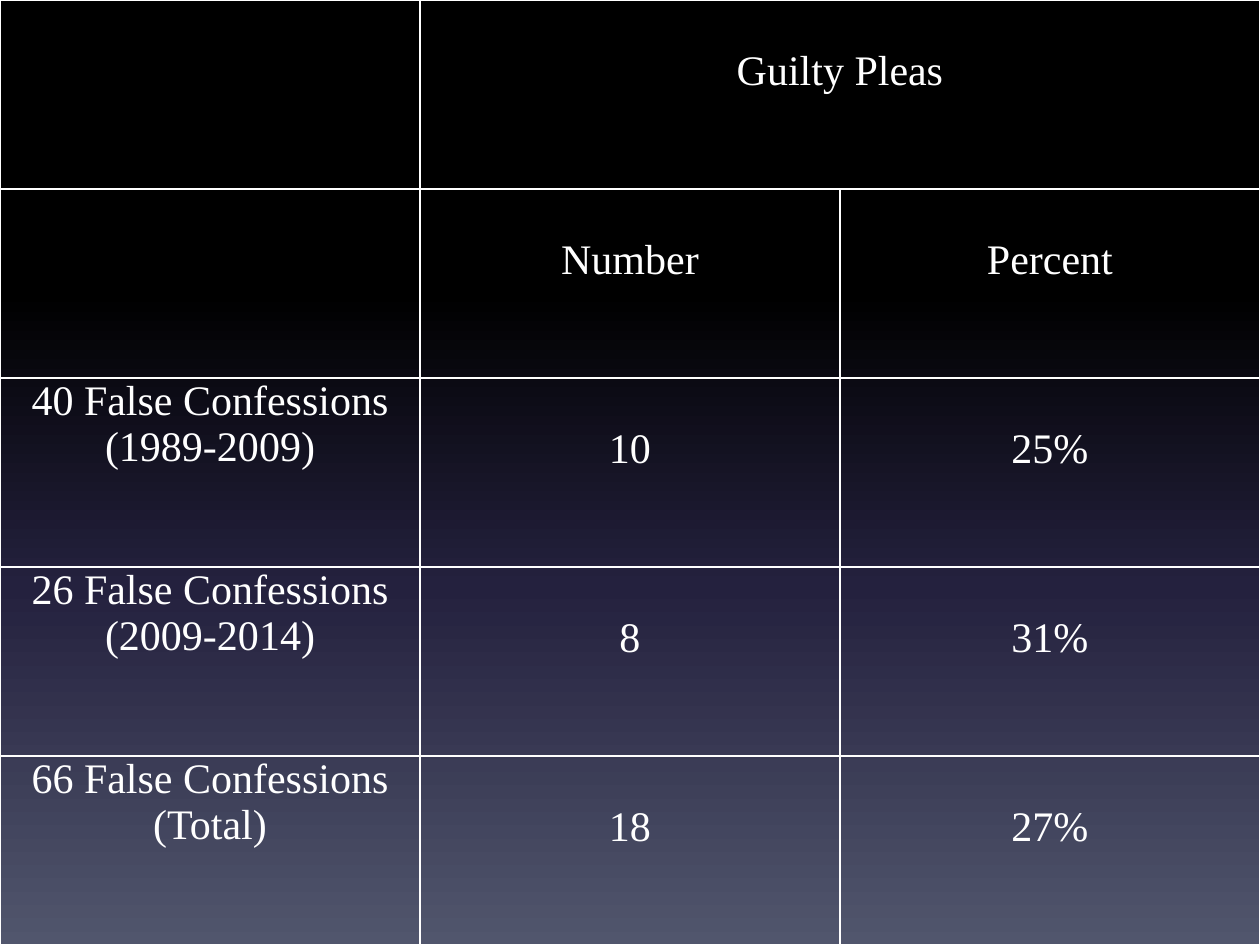
"""Build a slide with a table of guilty pleas among false confessions."""
import pptx
import pptx.dml.color
import pptx.enum.text
import pptx.oxml
import pptx.oxml.ns
import pptx.util

Inches = pptx.util.Inches
Pt = pptx.util.Pt
qn = pptx.oxml.ns.qn
NS = pptx.oxml.ns.nsdecls("a")

WIDTH, HEIGHT = 10, 7.5
BACKGROUND = [(0, "000000"), (31, "000000"), (62, "24213E"), (100, "51566D")]
ROWS = [
    ["", "Guilty Pleas", ""],
    ["", "Number", "Percent"],
    ["40 False Confessions (1989-2009)", "10", "25%"],
    ["26 False Confessions (2009-2014)", "8", "31%"],
    ["66 False Confessions (Total)", "18", "27%"],
]


def rgb(value):
    return pptx.dml.color.RGBColor.from_string(value)


def apply(target, values):
    for name, value in values.items():
        setattr(target, name, value)


class SlideBuilder:
    font = {"name": "Times New Roman", "size": Pt(24)}
    color = "FFFFFF"
    border_width = Pt(1)
    line_height = Inches(0.38)
    margins = {"margin_left": Inches(0.07), "margin_right": Inches(0.07),
               "margin_top": 0, "margin_bottom": 0}
    table_flags = {"first_row": False, "horz_banding": False}

    def __init__(self, s):
        self.s = s

    def background(self, stops):
        fill = self.s.background.fill
        fill.gradient()
        fill.gradient_angle = 270
        stop_list = next(self.s.element.iter(qn("a:gsLst")))
        stop_list.clear()
        for position, color in stops:
            stop_list.append(pptx.oxml.parse_xml(
                f'<a:gs {NS} pos="{position * 1000}">'
                f'<a:srgbClr val="{rgb(color)}"/></a:gs>'))

    def borders(self, cell):
        tc_pr = cell._tc.get_or_add_tcPr()
        for side in "LRTB":
            tc_pr.append(pptx.oxml.parse_xml(
                f'<a:ln{side} {NS} w="{self.border_width}"><a:solidFill>'
                f'<a:srgbClr val="{rgb(self.color)}"/></a:solidFill></a:ln{side}>'))

    def cell(self, cell, text, first_column):
        self.borders(cell)
        cell.fill.background()
        apply(cell, self.margins)
        if not first_column:
            cell.margin_top = self.line_height
        p = cell.text_frame.paragraphs[0]
        p.alignment = pptx.enum.text.PP_ALIGN.CENTER
        if text:
            r = p.add_run()
            r.text = text
            apply(r.font, self.font)
            r.font.color.rgb = rgb(self.color)

    def table(self, rows, left, top, width, height):
        n_rows, n_cols = len(rows), len(rows[0])
        table = self.s.shapes.add_table(
            n_rows, n_cols, Inches(left), Inches(top),
            Inches(width), Inches(height)).table
        apply(table, self.table_flags)
        for column in table.columns:
            column.width = Inches(width / n_cols)
        for row in table.rows:
            row.height = Inches(height / n_rows)
        for i, row in enumerate(rows):
            for j, text in enumerate(row):
                self.cell(table.cell(i, j), text, j == 0)
        return table


def main():
    prs = pptx.Presentation()
    prs.slide_width, prs.slide_height = Inches(WIDTH), Inches(HEIGHT)
    builder = SlideBuilder(prs.slides.add_slide(prs.slide_layouts[6]))
    builder.background(BACKGROUND)
    table = builder.table(ROWS, 0, 0, WIDTH, HEIGHT)
    table.cell(0, 1).merge(table.cell(0, 2))
    prs.save("out.pptx")


if __name__ == "__main__":
    main()
